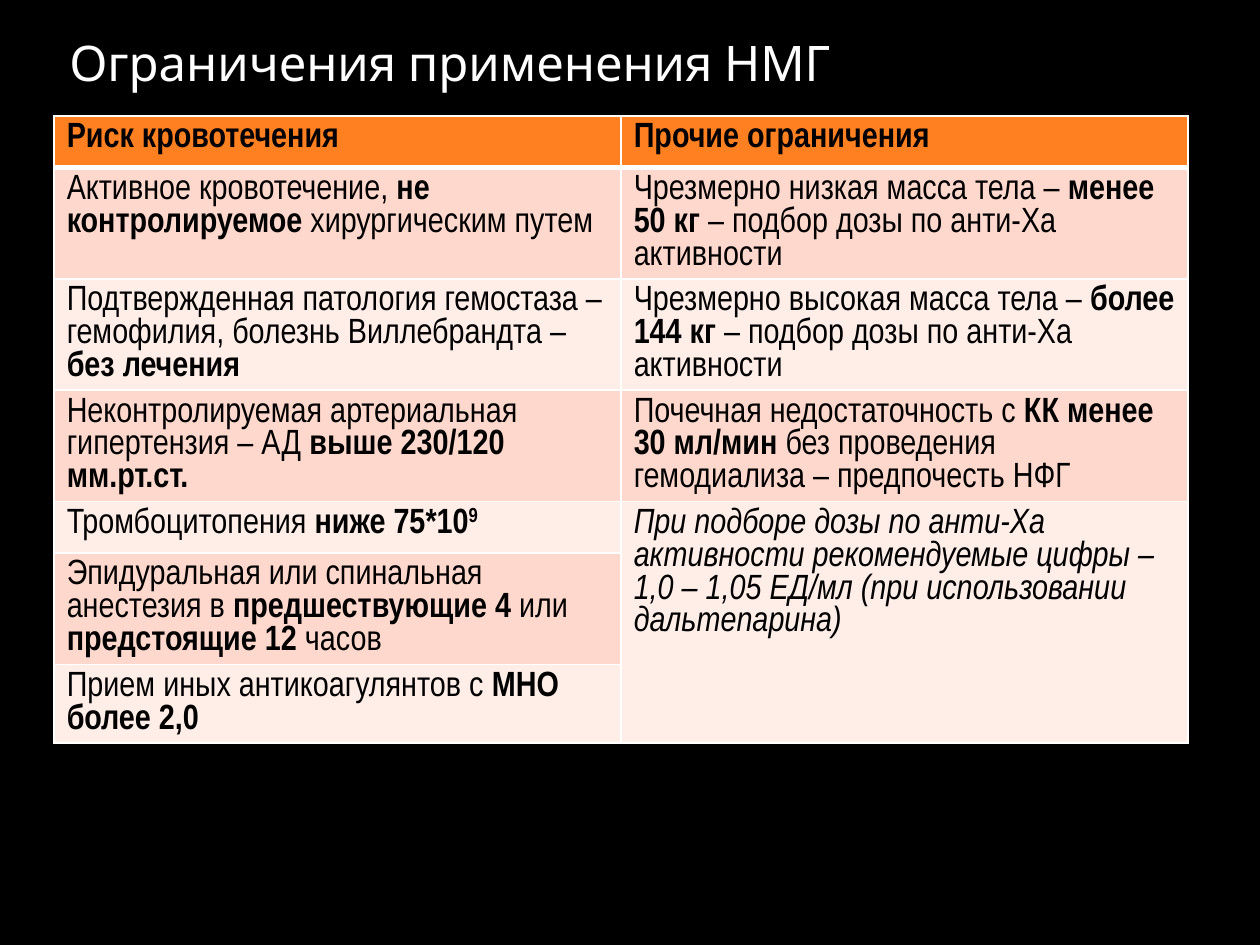
import pptx
import pptx.util
import pptx.dml.color
import pptx.enum.text
import pptx.oxml
import pptx.oxml.ns
from dataclasses import dataclass

Inches, Pt = pptx.util.Inches, pptx.util.Pt


@dataclass(frozen=True)
class Theme:
    background: str = "000000"
    title_color: str = "FFFFFF"
    text_color: str = "000000"
    border: str = "FFFFFF"
    header_fill: str = "FF8021"
    band_fills: tuple = ("FFD8CD", "FFEDE8")
    title_font: str = "Karla"
    table_font: str = "Arial Narrow"
    title_size: int = 28
    table_size: int = 20
    table_leading: float = 18.8
    border_width: int = 1
    header_rule: int = 3


THEME = Theme()
SLIDE_W, SLIDE_H = 10, 7.5

TITLE = "Ограничения применения НМГ"
# Each cell is a list of (text, style); style letters: b bold, i italic, s superscript
HEADERS = [[("Риск кровотечения", "b")], [("Прочие ограничения", "b")]]
BLEEDING_RISKS = [
    [("Активное кровотечение, ", ""), ("не контролируемое", "b"),
     (" хирургическим путем", "")],
    [("Подтвержденная патология гемостаза – гемофилия, болезнь Виллебрандта – ", ""),
     ("без лечения", "b")],
    [("Неконтролируемая артериальная гипертензия – АД ", ""),
     ("выше 230/120 мм.рт.ст.", "b")],
    [("Тромбоцитопения ", ""), ("ниже 75*10", "b"), ("9", "bs")],
    [("Эпидуральная или спинальная анестезия в ", ""), ("предшествующие 4 ", "b"),
     ("или ", ""), ("предстоящие 12", "b"), (" часов", "")],
    [("Прием иных антикоагулянтов с ", ""), ("МНО более 2,0", "b")],
]
OTHER_LIMITS = [
    [("Чрезмерно низкая масса тела – ", ""), ("менее 50 кг ", "b"),
     ("– подбор дозы по анти-Xa активности", "")],
    [("Чрезмерно высокая масса тела – ", ""), ("более 144 кг ", "b"),
     ("– подбор дозы по анти-Xa активности", "")],
    [("Почечная недостаточность с ", ""), ("КК менее 30 мл/мин", "b"),
     (" без проведения гемодиализа – предпочесть НФГ", "")],
    [("При подборе дозы по анти-Ха активности рекомендуемые цифры – 1,0 – 1,05 ЕД/мл "
      "(при использовании дальтепарина)", "i")],
]

TABLE_LEFT, TABLE_TOP = 0.43, 0.92
COLUMN_W, ROW_H = 0.45 * SLIDE_W, 0.41


def rgb(code):
    return pptx.dml.color.RGBColor.from_string(code)


def set_font(font, name, size, color):
    font.name, font.size = name, Pt(size)
    font.color.rgb = rgb(color)


def write_runs(cell, pieces):
    paragraph = cell.text_frame.paragraphs[0]
    paragraph.line_spacing = Pt(THEME.table_leading)
    for text, style in pieces:
        run = paragraph.add_run()
        run.text = text
        set_font(run.font, THEME.table_font, THEME.table_size, THEME.text_color)
        run.font.bold = "b" in style
        run.font.italic = "i" in style
        if "s" in style:
            run.font._element.set("baseline", "30000")


def set_borders(cell, top, bottom):
    """Draw all four cell borders; the line elements must precede the fill."""
    widths = {"L": THEME.border_width, "R": THEME.border_width, "T": top, "B": bottom}
    properties = cell._tc.get_or_add_tcPr()
    for position, (side, width) in enumerate(widths.items()):
        line = pptx.oxml.parse_xml(
            f'<a:ln{side} {pptx.oxml.ns.nsdecls("a")} w="{Pt(width)}"><a:solidFill>'
            f'<a:srgbClr val="{THEME.border}"/></a:solidFill></a:ln{side}>')
        properties.insert(position, line)


def add_title(slide):
    title = slide.shapes.add_textbox(
        Inches(0.05 * SLIDE_W), Inches(0.04 * SLIDE_H),
        Inches(0.9 * SLIDE_W), Inches(0.05 * SLIDE_H))
    frame = title.text_frame
    frame.word_wrap = True
    frame.vertical_anchor = pptx.enum.text.MSO_ANCHOR.MIDDLE
    frame.margin_left = frame.margin_right = Inches(0.05)
    frame.margin_top = frame.margin_bottom = Inches(0.05)
    frame.text = TITLE
    set_font(frame.paragraphs[0].runs[0].font,
             THEME.title_font, THEME.title_size, THEME.title_color)


def add_limits_table(slide):
    columns = [[header] + body
               for header, body in zip(HEADERS, (BLEEDING_RISKS, OTHER_LIMITS))]
    row_count = max(len(column) for column in columns)
    table = slide.shapes.add_table(
        row_count, len(columns), Inches(TABLE_LEFT), Inches(TABLE_TOP),
        Inches(COLUMN_W * len(columns)), Inches(ROW_H * row_count)).table

    for c, column in enumerate(columns):
        for r in range(row_count):
            cell = table.cell(r, c)
            cell.fill.solid()
            cell.fill.fore_color.rgb = rgb(
                THEME.band_fills[(r - 1) % 2] if r else THEME.header_fill)
            set_borders(cell,
                        THEME.header_rule if r == 1 else THEME.border_width,
                        THEME.header_rule if r == 0 else THEME.border_width)
            if r < len(column):
                write_runs(cell, column[r])
        if len(column) < row_count:
            table.cell(len(column) - 1, c).merge(table.cell(row_count - 1, c))


def main():
    deck = pptx.Presentation()
    deck.slide_width, deck.slide_height = Inches(SLIDE_W), Inches(SLIDE_H)
    slide = deck.slides.add_slide(deck.slide_layouts[6])
    slide.background.fill.solid()
    slide.background.fill.fore_color.rgb = rgb(THEME.background)
    add_title(slide)
    add_limits_table(slide)
    deck.save("out.pptx")


if __name__ == "__main__":
    main()
